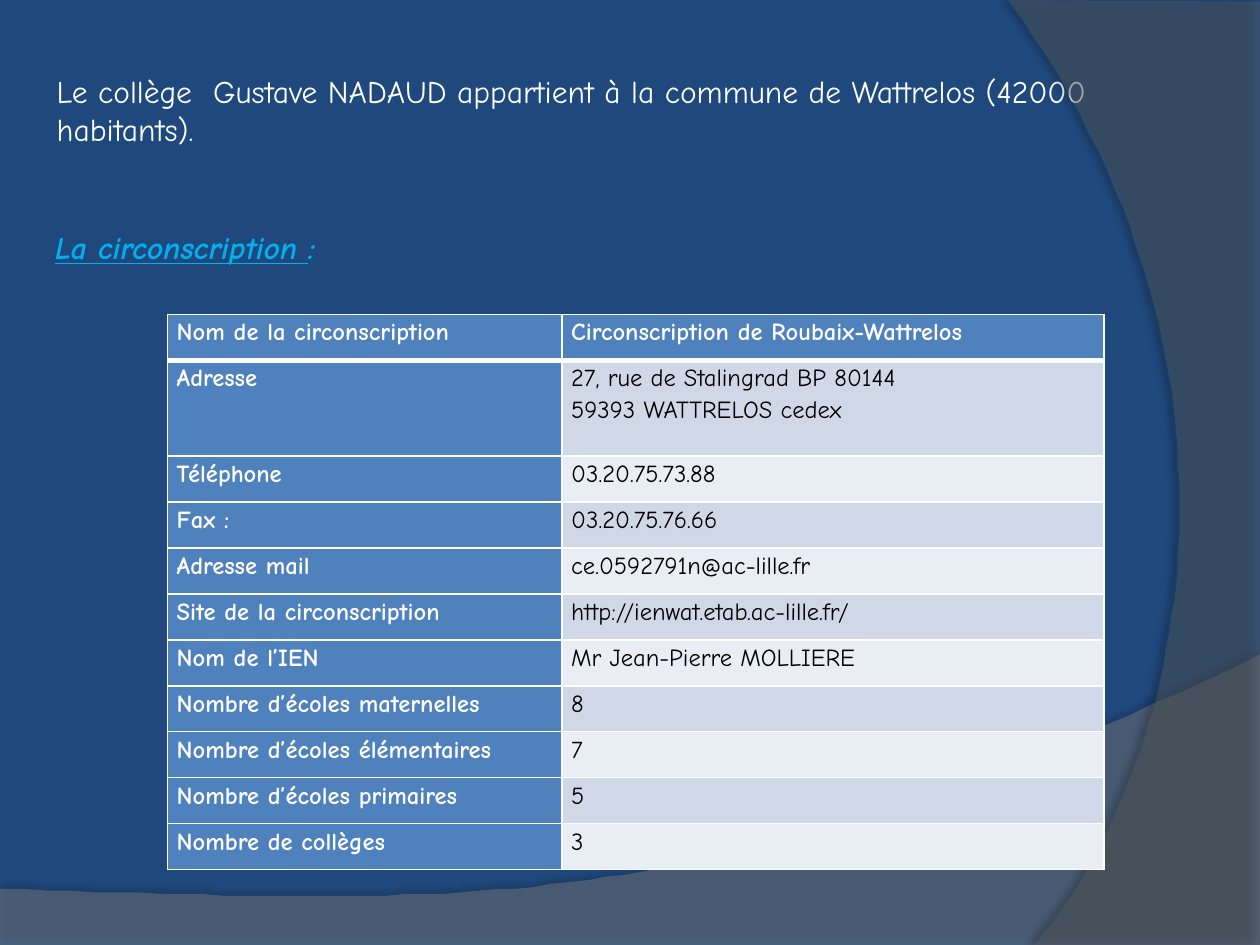
import pptx
import pptx.util
import pptx.dml.color
import pptx.enum.text
import pptx.oxml
import pptx.oxml.ns

Pt = pptx.util.Pt
FONT = "Comic Neue"
HEX = {"back": "1F497D", "wave": "7F7F7F", "arc": "5E5E5E", "white": "FFFFFF",
       "black": "000000", "cyan": "00B0F0", "head": "4F81BD",
       "odd": "D0D8E8", "even": "E9EDF4"}

INTRO = "Le collège  Gustave NADAUD appartient à la commune de Wattrelos (42000 habitants)."
ROWS = [
    ("Nom de la circonscription", "Circonscription de Roubaix-Wattrelos"),
    ("Adresse", "27, rue de Stalingrad BP 80144\n59393 WATTRELOS cedex"),
    ("Téléphone", "03.20.75.73.88"),
    ("Fax :", "03.20.75.76.66"),
    ("Adresse mail", "ce.0592791n@ac-lille.fr"),
    ("Site de la circonscription", "http://ienwat.etab.ac-lille.fr/"),
    ("Nom de l’IEN", "Mr Jean-Pierre MOLLIERE"),
    ("Nombre d’écoles maternelles", "8"),
    ("Nombre d’écoles élémentaires", "7"),
    ("Nombre d’écoles primaires", "5"),
    ("Nombre de collèges", "3"),
]
WIDTHS = (225.4, 309.6)
ROW, TALL = 26.3, 54.6
# Start of curve, two handles, end, then the corners that close the outline
WAVE = [(720, 374.4), (402.5, 524.9), (281.5, 517.7), (0, 507.6)], [(0, 540), (720, 540)]
ARC = [(591.1, 540), (673.2, 445.7), (733, 216), (576, 0)], [(720, 1.4), (720, 540)]


def tint(name):
    return pptx.dml.color.RGBColor.from_string(HEX[name])


def paint(fill, name):
    fill.solid()
    fill.fore_color.rgb = tint(name)


def node(xml):
    return pptx.oxml.parse_xml(xml.replace(">", f" {pptx.oxml.ns.nsdecls('a')}>", 1))


def write(frame, text, size=18, color="white", bold=False, slant=False, under=False,
          space=None, more=False):
    """Write lines of text; more=True adds a run to the last paragraph."""
    for i, line in enumerate(text.split("\n")):
        para = frame.add_paragraph() if i else frame.paragraphs[-1 if more else 0]
        para.alignment = pptx.enum.text.PP_ALIGN.LEFT
        para.line_spacing = space
        run = para.add_run()
        run.text = line
        font = run.font
        font.name, font.size = FONT, Pt(size)
        font.bold, font.italic, font.underline = bold, slant, under
        font.color.rgb = tint(color)


def place(shape, left, top, width, height):
    shape.left, shape.top, shape.width, shape.height = map(Pt, (left, top, width, height))
    shape.text_frame.word_wrap = True
    shape.text_frame.vertical_anchor = pptx.enum.text.MSO_ANCHOR.TOP
    shape.text_frame.auto_size = pptx.enum.text.MSO_AUTO_SIZE.NONE


def swoosh(slide, curve, ends, color, alpha, shade, dist, angle):
    """Draw a translucent outline with one curved side and a soft shadow."""
    dots = []
    for i in range(61):
        t = i / 60
        mix = ((1 - t) ** 3, 3 * t * (1 - t) ** 2, 3 * t * t * (1 - t), t ** 3)
        dots.append(tuple(sum(m * p[k] for m, p in zip(mix, curve)) for k in (0, 1)))
    pen = slide.shapes.build_freeform(*dots[0], scale=Pt(1))
    pen.add_line_segments(dots[1:] + ends, close=True)
    shape = pen.convert_to_shape()
    paint(shape.fill, color)
    shape.line.fill.background()
    shape.fill._xPr.find(".//" + pptx.oxml.ns.qn("a:srgbClr")).append(
        node(f'<a:alpha val="{alpha * 1000}"/>'.replace("/>", "></a:alpha>")))
    shape._element.spPr.append(node(
        f'<a:effectLst><a:outerShdw blurRad="{Pt(4)}" dist="{Pt(dist)}" dir="{angle * 60000}"'
        f' algn="ctr" rotWithShape="0"><a:srgbClr val="{HEX["black"]}">'
        f'<a:alpha val="{shade * 1000}"/></a:srgbClr></a:outerShdw></a:effectLst>'))


def border(cell, row):
    wide = {"T": 3 if row == 1 else 1, "B": 3 if row == 0 else 1}
    for side in "LRTB":
        cell._tc.get_or_add_tcPr().append(node(
            f'<a:ln{side} w="{Pt(wide.get(side, 1))}"><a:solidFill>'
            f'<a:srgbClr val="{HEX["white"]}"/></a:solidFill></a:ln{side}>'))


def main():
    deck = pptx.Presentation()
    deck.slide_width, deck.slide_height = Pt(720), Pt(540)
    slide = deck.slides.add_slide(deck.slide_layouts[5])
    paint(slide.background.fill, "back")

    # Background shapes
    swoosh(slide, *WAVE, "wave", 45, 35, 3.5, 270)
    swoosh(slide, *ARC, "arc", 40, 45, 4, 180)

    # Table
    high = [TALL if i == 1 else ROW for i in range(len(ROWS))]
    grid = slide.shapes.add_table(len(ROWS), 2, Pt(95.8), Pt(179.6),
                                  Pt(sum(WIDTHS)), Pt(sum(high))).table
    for col, width in zip(grid.columns, WIDTHS):
        col.width = Pt(width)
    for r, pair in enumerate(ROWS):
        grid.rows[r].height = Pt(high[r])
        for c, text in enumerate(pair):
            cell = grid.cell(r, c)
            label = r == 0 or c == 0
            cell.margin_left = cell.margin_right = Pt(5.2)
            cell.margin_top = cell.margin_bottom = 0
            border(cell, r)
            paint(cell.fill, "head" if label else "odd" if r % 2 else "even")
            write(cell.text_frame, text, size=14, bold=label, space=1.15,
                  color="white" if label else "black")

    # Opening sentence and table heading
    title = slide.shapes.title
    place(title, 25.2, 37.4, 652.3, 72.7)
    write(title.text_frame, INTRO)
    head = slide.shapes.add_textbox(0, 0, 0, 0)
    place(head, 24.5, 126.7, 607, 51.1)
    look = dict(color="cyan", bold=True, slant=True)
    write(head.text_frame, "La circonscription ", under=True, **look)
    write(head.text_frame, ":", more=True, **look)

    deck.save("out.pptx")


if __name__ == "__main__":
    main()
